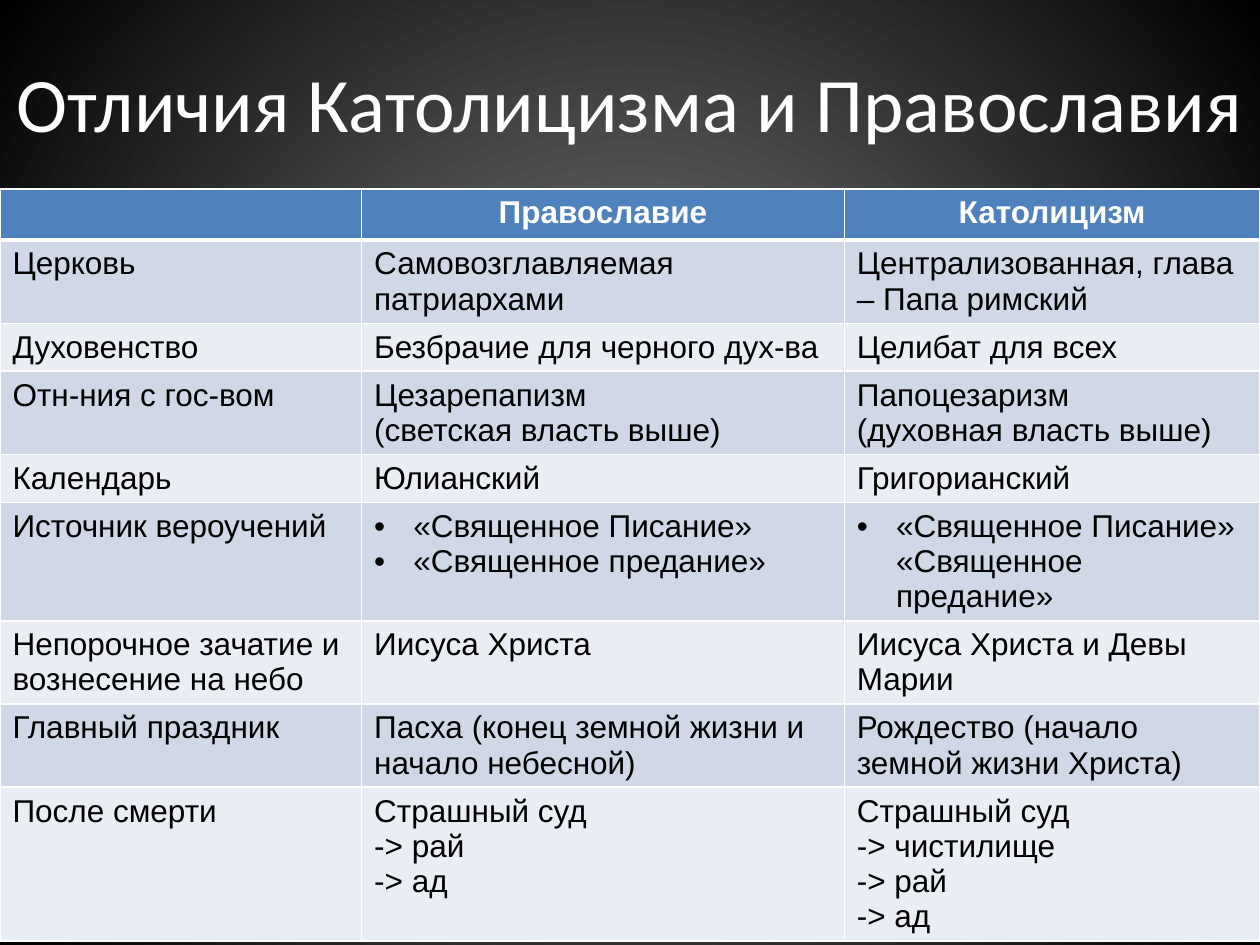
"""Build a slide comparing Orthodoxy and Catholicism in a table."""
from dataclasses import dataclass

from lxml.etree import SubElement
from pptx import Presentation
from pptx.dml.color import RGBColor
from pptx.enum.text import MSO_ANCHOR, MSO_AUTO_SIZE, PP_ALIGN
from pptx.oxml.ns import qn
from pptx.slide import Slide
from pptx.table import Table, _Cell as Cell
from pptx.util import Cm, Pt

WHITE = RGBColor(0xFF, 0xFF, 0xFF)
BLACK = RGBColor(0x00, 0x00, 0x00)
GRAY = RGBColor(0x7F, 0x7F, 0x7F)
BLUE = RGBColor(0x4F, 0x81, 0xBD)
BANDS = (RGBColor(0xD0, 0xD8, 0xE8), RGBColor(0xE9, 0xED, 0xF4))
COLUMN_WIDTHS = (Cm(7.29), Cm(9.73), Cm(8.38))
INDENT = Cm(0.79)


@dataclass(frozen=True)
class Comparison:
    topic: str
    orthodox: str
    catholic: str
    height: float = 1.6
    bulleted: bool = False


HEADER = Comparison("", "Православие", "Католицизм", 0.94)
COMPARISONS = (
    Comparison("Церковь", "Самовозглавляемая патриархами",
               "Централизованная, глава – Папа римский"),
    Comparison("Духовенство", "Безбрачие для черного дух-ва",
               "Целибат для всех", 0.94),
    Comparison("Отн-ния с гос-вом", "Цезарепапизм\n(светская власть выше)",
               "Папоцезаризм\n(духовная власть выше)"),
    Comparison("Календарь", "Юлианский", "Григорианский", 0.94),
    Comparison("Источник вероучений",
               "«Священное Писание»\n«Священное предание»",
               "«Священное Писание» «Священное предание»", bulleted=True),
    Comparison("Непорочное зачатие и вознесение на небо", "Иисуса Христа",
               "Иисуса Христа и Девы Марии"),
    Comparison("Главный праздник",
               "Пасха (конец земной жизни и начало небесной)",
               "Рождество (начало земной жизни Христа)"),
    Comparison("После смерти", "Страшный суд\v-> рай\n-> ад",
               "Страшный суд\n-> чистилище\v-> рай\n-> ад", 2.97),
)


def paint_background(slide: Slide) -> None:
    """Fill the background with a radial gradient."""
    fill = slide.background.fill
    fill.gradient()
    for stop, color in zip(fill.gradient_stops, (GRAY, BLACK)):
        stop.color.rgb = color
    gradient = next(slide.element.iter(qn("a:gradFill")))
    for linear in gradient.findall(qn("a:lin")):
        gradient.remove(linear)
    circle = SubElement(gradient, qn("a:path"), path="circle")
    SubElement(circle, qn("a:fillToRect"), l="50000", t="50000", r="50000", b="50000")


def write_title(slide: Slide, text: str) -> None:
    """Place and format the title placeholder."""
    title = slide.shapes.title
    title.left, title.top, title.width, title.height = Cm(0), Cm(0.76), Cm(25.4), Cm(2.57)
    frame = title.text_frame
    frame.text = text
    frame.auto_size = MSO_AUTO_SIZE.NONE
    frame.vertical_anchor = MSO_ANCHOR.MIDDLE
    frame.margin_left = frame.margin_right = Cm(0)
    para = frame.paragraphs[0]
    para.alignment = PP_ALIGN.CENTER
    font = para.runs[0].font
    font.name, font.size, font.color.rgb = "Calibri", Pt(44), WHITE


def draw_borders(cell: Cell, top: float, bottom: float) -> None:
    """Give a cell white borders, placed before its fill."""
    properties = cell._tc.get_or_add_tcPr()
    widths = {"a:lnL": 1, "a:lnR": 1, "a:lnT": top, "a:lnB": bottom}
    for position, (tag, width) in enumerate(widths.items()):
        line = SubElement(properties, qn(tag), w=str(Pt(width)))
        solid = SubElement(line, qn("a:solidFill"))
        SubElement(solid, qn("a:srgbClr"), val=str(WHITE))
        properties.insert(position, line)


def write_cell(cell: Cell, text: str, is_header: bool, bulleted: bool) -> None:
    """Write the paragraphs of one cell."""
    cell.text_frame.text = text
    for para in cell.text_frame.paragraphs:
        para.font.size = Pt(18)
        para.alignment = PP_ALIGN.CENTER if is_header else PP_ALIGN.LEFT
        if bulleted:
            properties = para._p.get_or_add_pPr()
            properties.set("marL", str(INDENT))
            properties.set("indent", str(-INDENT))
            bullet_font = SubElement(properties, qn("a:buFont"), typeface="Arial")
            bullet = SubElement(properties, qn("a:buChar"), char="•")
            properties.insert(0, bullet_font)
            properties.insert(1, bullet)
        for span in para.runs:
            font = span.font
            font.name, font.size, font.bold = "Arial", Pt(18), is_header
            font.color.rgb = WHITE if is_header else BLACK


def fill_row(table: Table, index: int, entry: Comparison) -> None:
    """Fill and format one row of the table."""
    is_header = index == 0
    table.rows[index].height = Cm(entry.height)
    texts = (entry.topic, entry.orthodox, entry.catholic)
    for column, text in enumerate(texts):
        cell = table.cell(index, column)
        cell.fill.solid()
        cell.fill.fore_color.rgb = BLUE if is_header else BANDS[(index - 1) % 2]
        draw_borders(cell, top=3 if index == 1 else 1, bottom=3 if is_header else 1)
        write_cell(cell, text, is_header, entry.bulleted and column > 0)


def main() -> None:
    """Create and save the deck."""
    deck = Presentation()
    deck.slide_width, deck.slide_height = Cm(25.4), Cm(19.05)
    page = deck.slides.add_slide(deck.slide_layouts[5])
    paint_background(page)
    write_title(page, "Отличия Католицизма и Православия")
    entries = (HEADER, *COMPARISONS)
    table = page.shapes.add_table(len(entries), len(COLUMN_WIDTHS), Cm(0), Cm(3.81),
                                  Cm(25.4), Cm(15.24)).table
    for column, width in zip(table.columns, COLUMN_WIDTHS):
        column.width = width
    for index, entry in enumerate(entries):
        fill_row(table, index, entry)
    deck.save("out.pptx")


if __name__ == "__main__":
    main()
